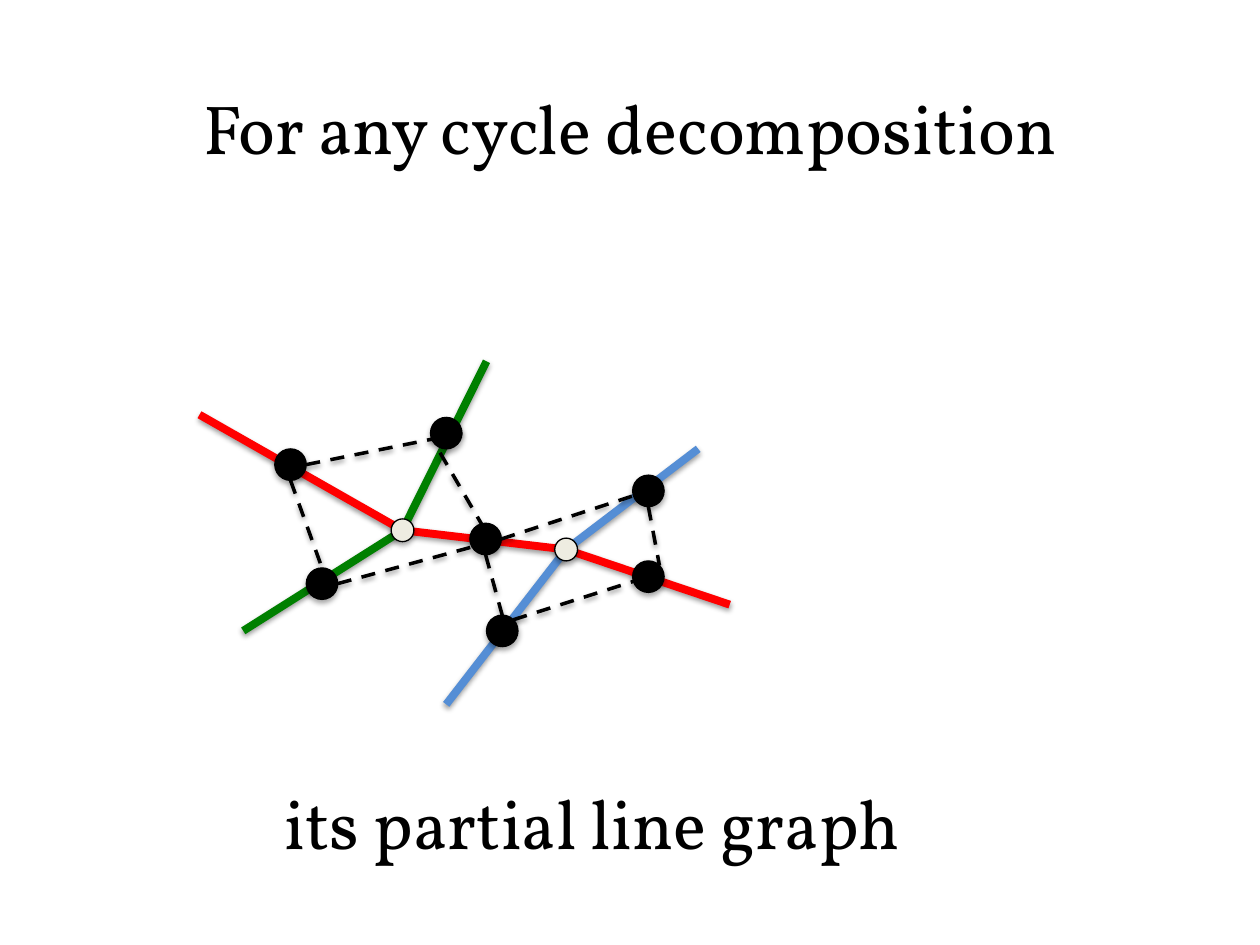
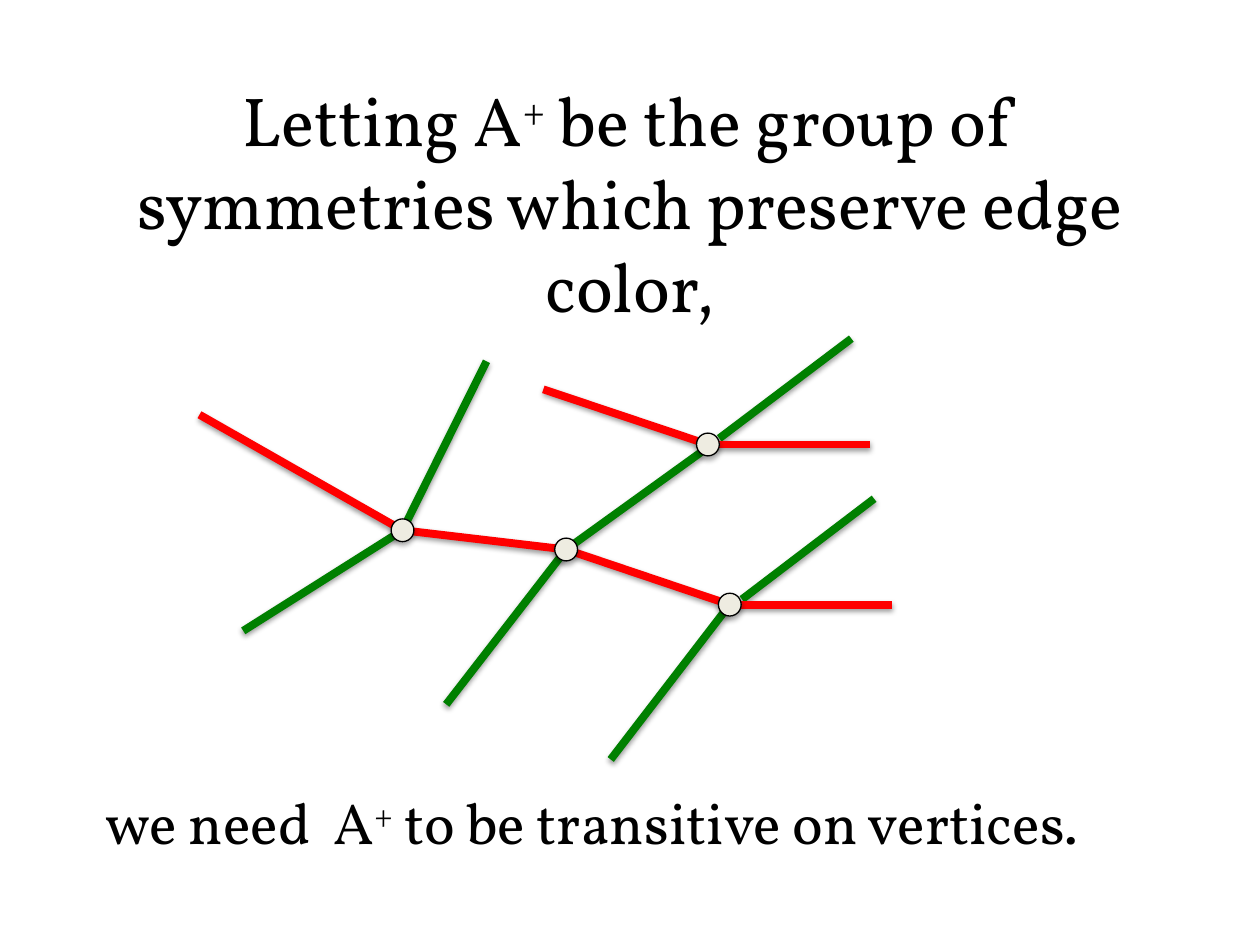
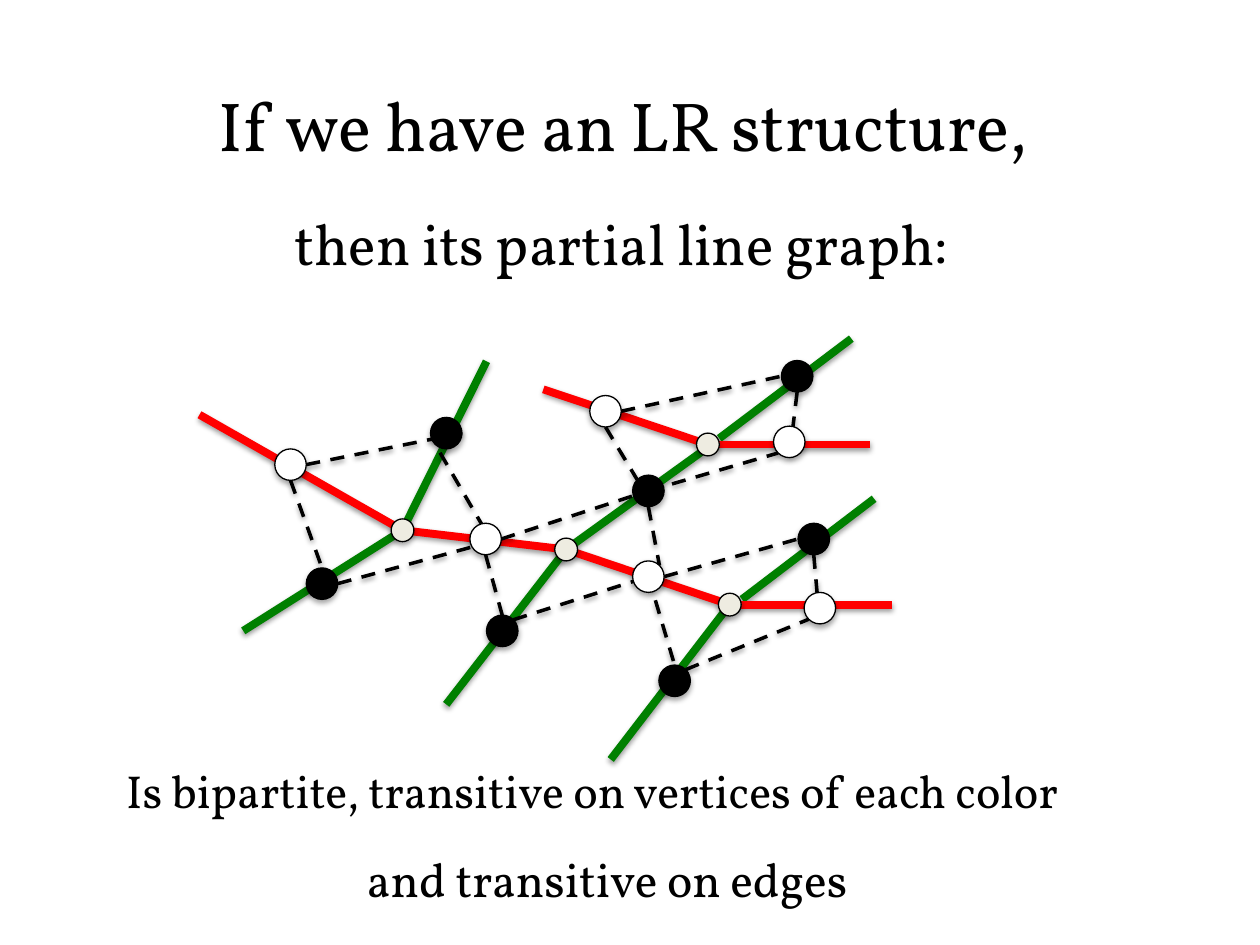
from math import cos, radians, sin

from lxml import etree
from pptx import Presentation
from pptx.dml.color import RGBColor
from pptx.enum import dml, shapes, text
from pptx.oxml import ns
from pptx.util import Pt

# Shared look
FONT = "Vollkorn"
BLACK = RGBColor(0x00, 0x00, 0x00)
WHITE = RGBColor(0xFF, 0xFF, 0xFF)
CREAM = RGBColor(0xEE, 0xEC, 0xE1)
RED = RGBColor(0xFF, 0x00, 0x00)
GREEN = RGBColor(0x00, 0x80, 0x00)
BLUE = RGBColor(0x55, 0x8E, 0xD5)
TITLE_SIZE = 39.6
TEXT_WIDTH = 612
HUB_SIZE, DOT_SIZE = 13, 18
EDGE_WIDTH, DASH_WIDTH, OUTLINE_WIDTH = 4.5, 2, 0.75
SHADOW_BLUR, LINE_SHADOW, DISC_SHADOW = 3.1, (1.6, 38), (1.8, 35)  # (distance, opacity)

# Vertices of the coloured graph
LEFT, MIDDLE, RIGHT, UPPER = (230, 303), (323.5, 314), (417, 345.5), (404.5, 254)
CORE_HUBS = [LEFT, MIDDLE]
ALL_HUBS = CORE_HUBS + [RIGHT, UPPER]

# Coloured edges: start, end, colour
CORE_EDGES = [
    ((139, 360.5), LEFT, GREEN),
    (LEFT, (278, 206.5), GREEN),
    ((114, 237), LEFT, RED),
    (LEFT, MIDDLE, RED),
    (MIDDLE, RIGHT, RED),
]
BLUE_CYCLE = [
    (MIDDLE, (399, 256.5), BLUE),
    ((255, 402.5), MIDDLE, BLUE),
]
GREEN_CYCLES = [
    (MIDDLE, (400.5, 258.5), GREEN),
    ((255, 402.5), MIDDLE, GREEN),
    ((424, 342.5), (499.5, 285), GREEN),
    ((349, 434), RIGHT, GREEN),
    (RIGHT, (510, 345.5), RED),
    ((411, 250.5), (486.5, 193.5), GREEN),
    ((310.5, 222.5), UPPER, RED),
    (UPPER, (497, 254), RED),
]

# Line graph vertices: centre and the colour of the edge each one stands for
CORE_DOTS = {
    "west": ((166, 265.5), RED),
    "southwest": ((184, 333.5), GREEN),
    "north": ((255, 247.5), GREEN),
    "centre": ((277.5, 308), RED),
    "south": ((287, 360.5), GREEN),
    "east": ((370.5, 329.5), RED),
    "northeast": ((370.5, 280.5), GREEN),
}
ALL_DOTS = CORE_DOTS | {
    "upper west": ((346, 235), RED),
    "upper north": ((455.5, 215), GREEN),
    "upper east": ((451, 252.5), RED),
    "lower south": ((385.5, 389), GREEN),
    "lower north": ((465, 308), GREEN),
    "lower east": ((468.5, 347.5), RED),
}

# Line graph edges: dot and compass side at each end ("C" is the dot's centre)
CORE_DASHES = [
    ("west", "E", "north", "E"),
    ("west", "S", "southwest", "N"),
    ("southwest", "E", "centre", "E"),
    ("centre", "SE", "north", "SW"),
    ("centre", "S", "south", "N"),
    ("centre", "E", "northeast", "C"),
    ("northeast", "S", "east", "NE"),
    ("south", "NE", "east", "C"),
]
ALL_DASHES = CORE_DASHES + [
    ("upper west", "E", "upper north", "W"),
    ("upper west", "S", "northeast", "NW"),
    ("upper north", "S", "upper east", "S"),
    ("northeast", "C", "upper east", "SW"),
    ("east", "E", "lower north", "W"),
    ("east", "C", "lower south", "N"),
    ("lower north", "S", "lower east", "S"),
    ("lower south", "NE", "lower east", "SW"),
]
COMPASS = ["E", "SE", "S", "SW", "W", "NW", "N", "NE"]

# Slides; a caption is wording, size, left, top, height
SLIDES = [
    dict(
        title="For any cycle decomposition", title_height=46,
        captions=[("its partial line graph", TITLE_SIZE, 32.5, 446.5, 46)],
        edges=CORE_EDGES + BLUE_CYCLE, hubs=CORE_HUBS,
        dashes=CORE_DASHES, dots=CORE_DOTS, dot_fills={RED: BLACK, GREEN: BLACK},
    ),
    dict(
        title="Letting A+ be the group of symmetries which preserve edge color,",
        title_height=132,
        captions=[("we need  A+ to be transitive on vertices.", 33, 32.5, 446.5, 46)],
        edges=CORE_EDGES + GREEN_CYCLES, hubs=ALL_HUBS,
        dashes=[], dots={}, dot_fills={},
    ),
    dict(
        title="If we have an LR structure, ", title_height=42,
        captions=[
            ("then its partial line graph:", 33, 49, 117.5, 42),
            ("Is bipartite, transitive on vertices of each color", 26.4, 32.5, 426, 51),
            ("and transitive on edges", 27.3, 41, 476.5, 51),
        ],
        edges=CORE_EDGES + GREEN_CYCLES, hubs=ALL_HUBS,
        dashes=ALL_DASHES, dots=ALL_DOTS, dot_fills={RED: WHITE, GREEN: BLACK},
    ),
]


def write(box, wording, size, left, top, height):
    """Place a centred text; a plus sign is raised."""
    box.left, box.top, box.width, box.height = map(Pt, (left, top, TEXT_WIDTH, height))
    frame = box.text_frame
    frame.word_wrap = True
    frame.auto_size = text.MSO_AUTO_SIZE.NONE
    frame.vertical_anchor = text.MSO_ANCHOR.MIDDLE
    paragraph = frame.paragraphs[0]
    paragraph.alignment = text.PP_ALIGN.CENTER
    for piece in filter(None, wording.partition("+")):
        run = paragraph.add_run()
        run.text = piece
        run.font.name, run.font.size = FONT, Pt(size)
        run.font.color.rgb = BLACK
        if piece == "+":
            run._r.get_or_add_rPr().set("baseline", "30000")


def add_shadow(part, distance, opacity):
    effects = etree.SubElement(part._element.spPr, ns.qn("a:effectLst"))
    shadow = etree.SubElement(
        effects, ns.qn("a:outerShdw"), blurRad=str(Pt(SHADOW_BLUR)),
        dist=str(Pt(distance)), dir="5400000", rotWithShape="0")
    black = etree.SubElement(shadow, ns.qn("a:srgbClr"), val=str(BLACK))
    etree.SubElement(black, ns.qn("a:alpha"), val=str(opacity * 1000))


def add_line(slide, start, end, color, width, dash=None):
    line = slide.shapes.add_connector(
        shapes.MSO_CONNECTOR.STRAIGHT, *map(Pt, (*start, *end)))
    line.line.color.rgb = color
    line.line.width = Pt(width)
    line.line.dash_style = dash
    add_shadow(line, *LINE_SHADOW)


def add_disc(slide, centre, size, fill):
    x, y = centre
    disc = slide.shapes.add_shape(
        shapes.MSO_SHAPE.OVAL, *map(Pt, (x - size / 2, y - size / 2, size, size)))
    disc.fill.solid()
    disc.fill.fore_color.rgb = fill
    disc.line.color.rgb = BLACK
    disc.line.width = Pt(OUTLINE_WIDTH)
    add_shadow(disc, *DISC_SHADOW)


def rim_point(dot, side):
    (x, y), _ = ALL_DOTS[dot]
    if side == "C":
        return x, y
    angle = radians(45 * COMPASS.index(side))
    return x + DOT_SIZE / 2 * cos(angle), y + DOT_SIZE / 2 * sin(angle)


def build_slide(deck, content):
    slide = deck.slides.add_slide(deck.slide_layouts[0])
    subtitle = slide.placeholders[1]._element
    subtitle.getparent().remove(subtitle)

    # Title and captions
    write(slide.shapes.title, content["title"], TITLE_SIZE, 54, 49.5,
          content["title_height"])
    for caption in content["captions"]:
        write(slide.shapes.add_textbox(0, 0, 0, 0), *caption)

    # Coloured graph
    for start, end, color in content["edges"]:
        add_line(slide, start, end, color, EDGE_WIDTH)
    for hub in content["hubs"]:
        add_disc(slide, hub, HUB_SIZE, CREAM)

    # Partial line graph
    for dot, side, other_dot, other_side in content["dashes"]:
        add_line(slide, rim_point(dot, side), rim_point(other_dot, other_side),
                 BLACK, DASH_WIDTH, dml.MSO_LINE.DASH)
    for centre, edge_color in content["dots"].values():
        add_disc(slide, centre, DOT_SIZE, content["dot_fills"][edge_color])


def main():
    deck = Presentation()
    deck.slide_width, deck.slide_height = Pt(720), Pt(540)
    for content in SLIDES:
        build_slide(deck, content)
    deck.save("out.pptx")


if __name__ == "__main__":
    main()
